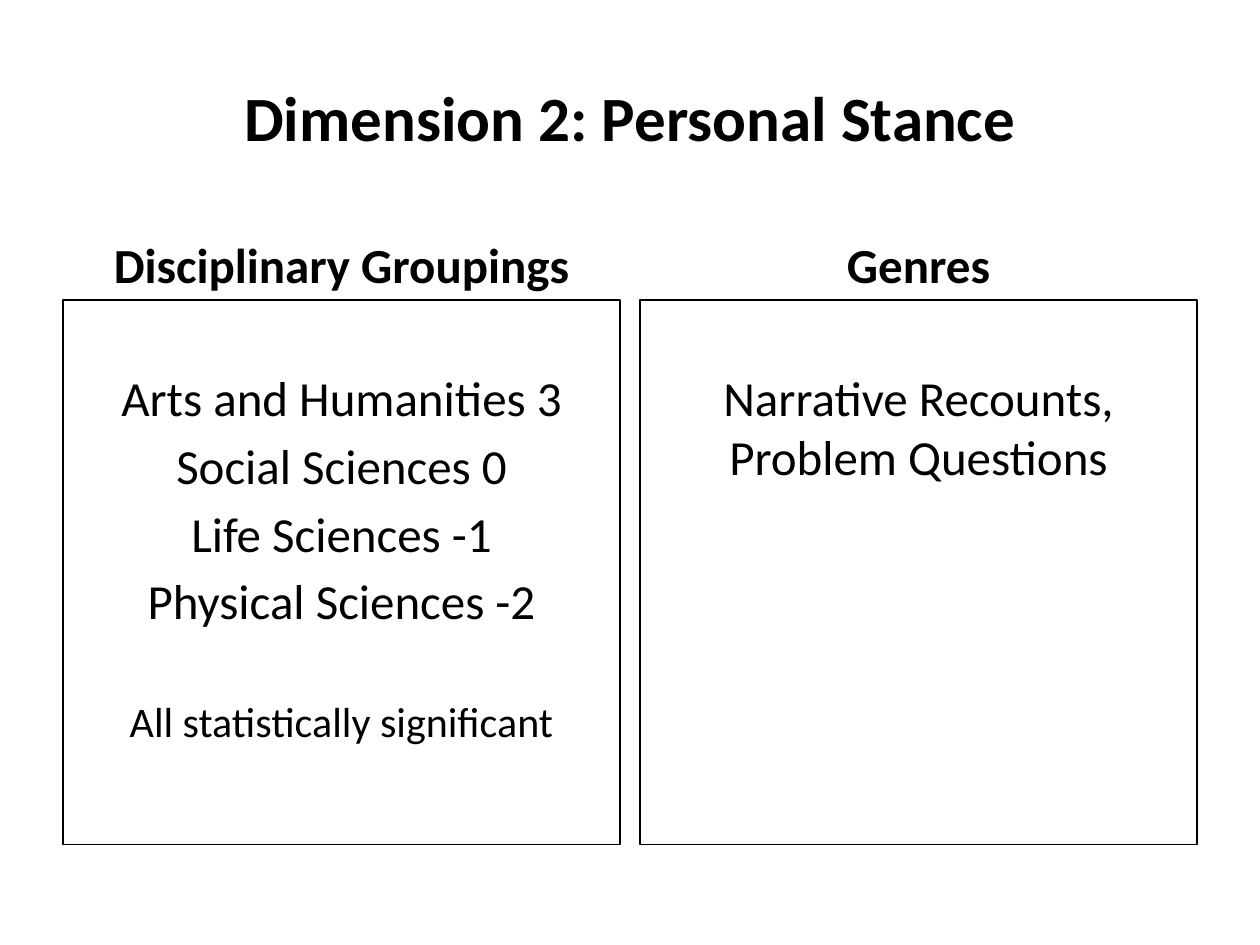
from pptx import Presentation
from pptx.dml.color import RGBColor
from pptx.enum.text import MSO_ANCHOR, MSO_AUTO_SIZE, PP_ALIGN
from pptx.oxml.ns import qn
from pptx.util import Inches, Pt

COLORS = {"ink": "000000"}
FONT = "Calibri"
TITLE = "Dimension 2: Personal Stance"
# Each line: text, size, space before
COLUMNS = [
    ("Disciplinary Groupings", [
        ("Arts and Humanities 3", 28, 0),
        ("Social Sciences 0", 28, 5),
        ("Life Sciences -1", 28, 5),
        ("Physical Sciences -2", 28, 5),
        ("All statistically significant", 24, 38),
    ]),
    ("Genres", [("Narrative Recounts, Problem Questions", 28, 0)]),
]

SLIDE_W, SLIDE_H = 10, 7.5
MARGIN, GUTTER = 0.5, 0.16
CONTENT_W = SLIDE_W - 2 * MARGIN
COLUMN_W = (CONTENT_W - GUTTER) / len(COLUMNS)
HEADING_TOP, HEADING_H = 1.68, 0.7
PANEL_TOP, PANEL_H = HEADING_TOP + HEADING_H, 4.32
PANEL_INSET = 0.54


def fill_placeholder(holder, box, lines, anchor, bold=False):
    """Place a placeholder and write its centred, unbulleted lines."""
    holder.left, holder.top, holder.width, holder.height = map(Inches, box)
    frame = holder.text_frame
    frame.text = "\n".join(text for text, _, _ in lines)
    frame.word_wrap = True
    frame.auto_size = MSO_AUTO_SIZE.NONE
    frame.vertical_anchor = anchor
    for paragraph, (_, size, gap) in zip(frame.paragraphs, lines):
        paragraph.alignment = PP_ALIGN.CENTER
        paragraph.space_before = Pt(gap)
        font = paragraph.font
        font.name, font.size, font.bold = FONT, Pt(size), bold
        font.color.rgb = RGBColor.from_string(COLORS["ink"])
        properties = paragraph._p.get_or_add_pPr()
        properties.set("marL", "0")
        properties.set("indent", "0")
        bullet_off = properties.makeelement(qn("a:buNone"), {})
        properties.find(qn("a:defRPr")).addprevious(bullet_off)


presentation = Presentation()
presentation.slide_width, presentation.slide_height = Inches(SLIDE_W), Inches(SLIDE_H)
comparison = presentation.slide_layouts.get_by_name("Comparison")
slide = presentation.slides.add_slide(comparison)
title, *bodies = list(slide.placeholders)[:5]

fill_placeholder(title, (MARGIN, 0.3, CONTENT_W, 1.25),
                 [(TITLE, 36, 0)], MSO_ANCHOR.MIDDLE, bold=True)

for column, (heading, lines) in enumerate(COLUMNS):
    left = MARGIN + column * (COLUMN_W + GUTTER)
    heading_body, panel = bodies[2 * column:2 * column + 2]
    fill_placeholder(heading_body, (left, HEADING_TOP, COLUMN_W, HEADING_H),
                     [(heading, 28, 0)], MSO_ANCHOR.BOTTOM, bold=True)
    fill_placeholder(panel, (left, PANEL_TOP, COLUMN_W, PANEL_H), lines, MSO_ANCHOR.TOP)
    panel.text_frame.margin_top = Inches(PANEL_INSET)
    panel.line.color.rgb = RGBColor.from_string(COLORS["ink"])
    panel.line.width = Pt(0.75)

presentation.save("out.pptx")
